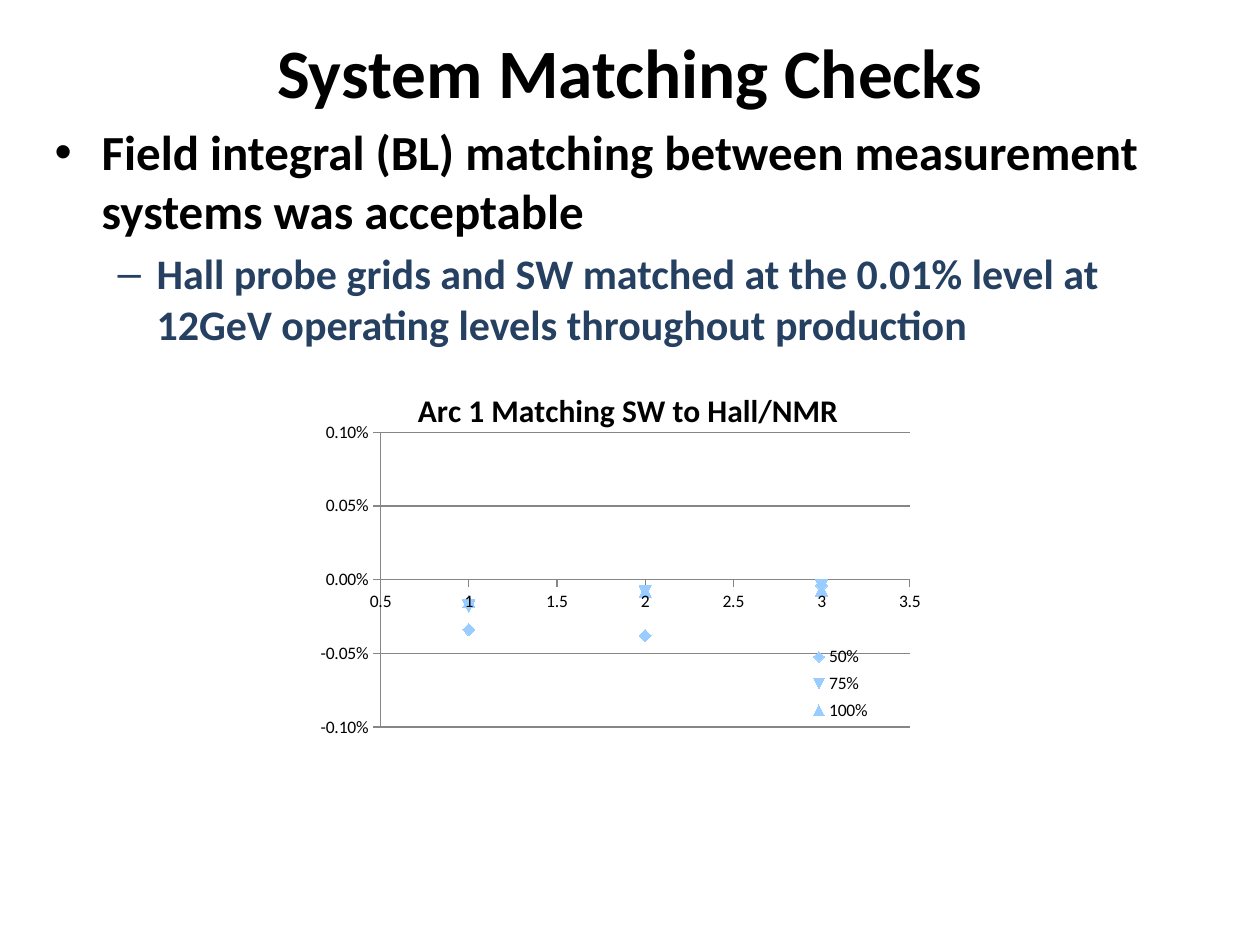
"""Build the slide on system matching checks."""
from lxml.etree import SubElement
from pptx import Presentation
from pptx.chart.data import XyChartData
from pptx.dml.color import RGBColor
from pptx.enum.chart import (XL_CHART_TYPE, XL_LEGEND_POSITION,
                             XL_MARKER_STYLE, XL_TICK_MARK)
from pptx.enum.text import MSO_ANCHOR, PP_ALIGN
from pptx.oxml.ns import qn
from pptx.util import Cm, Pt


def shade(code):
    return RGBColor.from_string(code)


def write(para, text, font="Calibri", size=18, color="000000", bold=True,
          align=PP_ALIGN.LEFT, mark=None, left=0, hang=0, gap=0):
    if mark:
        props = para._p.get_or_add_pPr()
        props.set("marL", str(Cm(left)))
        props.set("indent", str(-Cm(hang)))
        SubElement(props, qn("a:buFont")).set("typeface", "Arial")
        SubElement(props, qn("a:buChar")).set("char", mark)
    para.alignment = align
    para.space_before = Pt(gap)
    run = para.add_run()
    run.text = text
    face = run.font
    face.name, face.size, face.bold = font, Pt(size), bold
    face.color.rgb = shade(color)


def place(node, inner=False, **spots):
    for old in node.findall(qn("c:layout")):
        node.remove(old)
    frame = SubElement(node, qn("c:layout"))
    box = SubElement(frame, qn("c:manualLayout"))
    if inner:
        SubElement(box, qn("c:layoutTarget")).set("val", "inner")
    for key in "xy":
        SubElement(box, qn(f"c:{key}Mode")).set("val", "edge")
    for key, value in spots.items():
        SubElement(box, qn(f"c:{key}")).set("val", str(value))
    after = node.find(qn("c:overlay"))
    (node[0] if after is None else after).addprevious(frame)


class Deck:
    def __init__(self, font="Calibri", line="868686", tint="99CCFF"):
        self.font, self.line, self.tint = font, line, tint
        self.show = Presentation()
        self.show.slide_width, self.show.slide_height = Cm(25.4), Cm(19.05)
        self.slide = self.show.slides.add_slide(self.show.slide_layouts[6])

    def text(self, spot, items, anchor=MSO_ANCHOR.TOP):
        frame = self.slide.shapes.add_textbox(*map(Cm, spot)).text_frame
        frame.word_wrap = True
        frame.vertical_anchor = anchor
        for i, (words, style) in enumerate(items):
            para = frame.add_paragraph() if i else frame.paragraphs[0]
            write(para, words, font=self.font, **style)

    def axis(self, axis, low, high, step, form):
        axis.minimum_scale, axis.maximum_scale = low, high
        axis.major_unit = step
        axis.major_tick_mark = XL_TICK_MARK.OUTSIDE
        axis.minor_tick_mark = XL_TICK_MARK.NONE
        axis.tick_labels.number_format = form
        axis.tick_labels.number_format_is_linked = False
        self.rule(axis.format.line)

    def rule(self, line):
        line.color.rgb = shade(self.line)
        line.width = Pt(0.75)

    def scatter(self, spot, title, rows):
        data = XyChartData(number_format="0.00%")
        for name, _, values in rows:
            row = data.add_series(name)
            for x, y in enumerate(values, 1):
                row.add_data_point(x, y)
        chart = self.slide.shapes.add_chart(
            XL_CHART_TYPE.XY_SCATTER, *map(Cm, spot), data).chart
        chart.font.name, chart.font.size = self.font, Pt(10)
        chart.font.color.rgb = shade("000000")

        write(chart.chart_title.text_frame.paragraphs[0], title,
              font=self.font, align=PP_ALIGN.CENTER)
        place(chart.chart_title._element, x=0.17, y=0.04)

        self.axis(chart.category_axis, 0.5, 3.5, 0.5, "General")
        self.axis(chart.value_axis, -0.001, 0.001, 0.0005, "0.00%")
        chart.category_axis.has_major_gridlines = False
        chart.value_axis.has_major_gridlines = True
        self.rule(chart.value_axis.major_gridlines.format.line)

        chart.has_legend = True
        chart.legend.position = XL_LEGEND_POSITION.RIGHT
        chart.legend.include_in_layout = False
        place(chart.legend._element, x=0.79, y=0.72, w=0.12, h=0.23)
        place(chart._chartSpace.chart.plotArea, inner=True,
              x=0.12, y=0.17, w=0.84, h=0.78)

        chart.plots[0].vary_by_categories = False
        for row, (_, style, _) in zip(chart.plots[0].series, rows):
            row.smooth = False
            row.format.line.fill.background()
            row.marker.style, row.marker.size = style, 7
            row.marker.format.fill.solid()
            row.marker.format.fill.fore_color.rgb = shade(self.tint)
            row.marker.format.line.fill.background()


def main():
    deck = Deck()
    deck.text((1.27, 0.64, 22.86, 1.57),
              [("System Matching Checks",
                dict(size=39.6, align=PP_ALIGN.CENTER))],
              anchor=MSO_ANCHOR.MIDDLE)
    deck.text((0.85, 2.33, 23.71, 5.08), [
        ("Field integral (BL) matching between measurement systems "
         "was acceptable",
         dict(size=28, mark="•", left=0.95, hang=0.95)),
        ("Hall probe grids and SW matched at the 0.01% level at 12GeV "
         "operating levels throughout production",
         dict(size=24, color="254061", mark="–", left=2.06, hang=0.79,
              gap=4.8)),
    ])
    deck.scatter((6.15, 7.42, 12.7, 7.62), "Arc 1 Matching SW to Hall/NMR", [
        ("50%", XL_MARKER_STYLE.DIAMOND, (-0.00034, -0.00038, -0.00004)),
        ("75%", XL_MARKER_STYLE.AUTOMATIC, (-0.00018, -0.00008, -0.00004)),
        ("100%", XL_MARKER_STYLE.TRIANGLE, (-0.00015, -0.00008, -0.00007)),
    ])
    deck.show.save("out.pptx")


if __name__ == "__main__":
    main()
